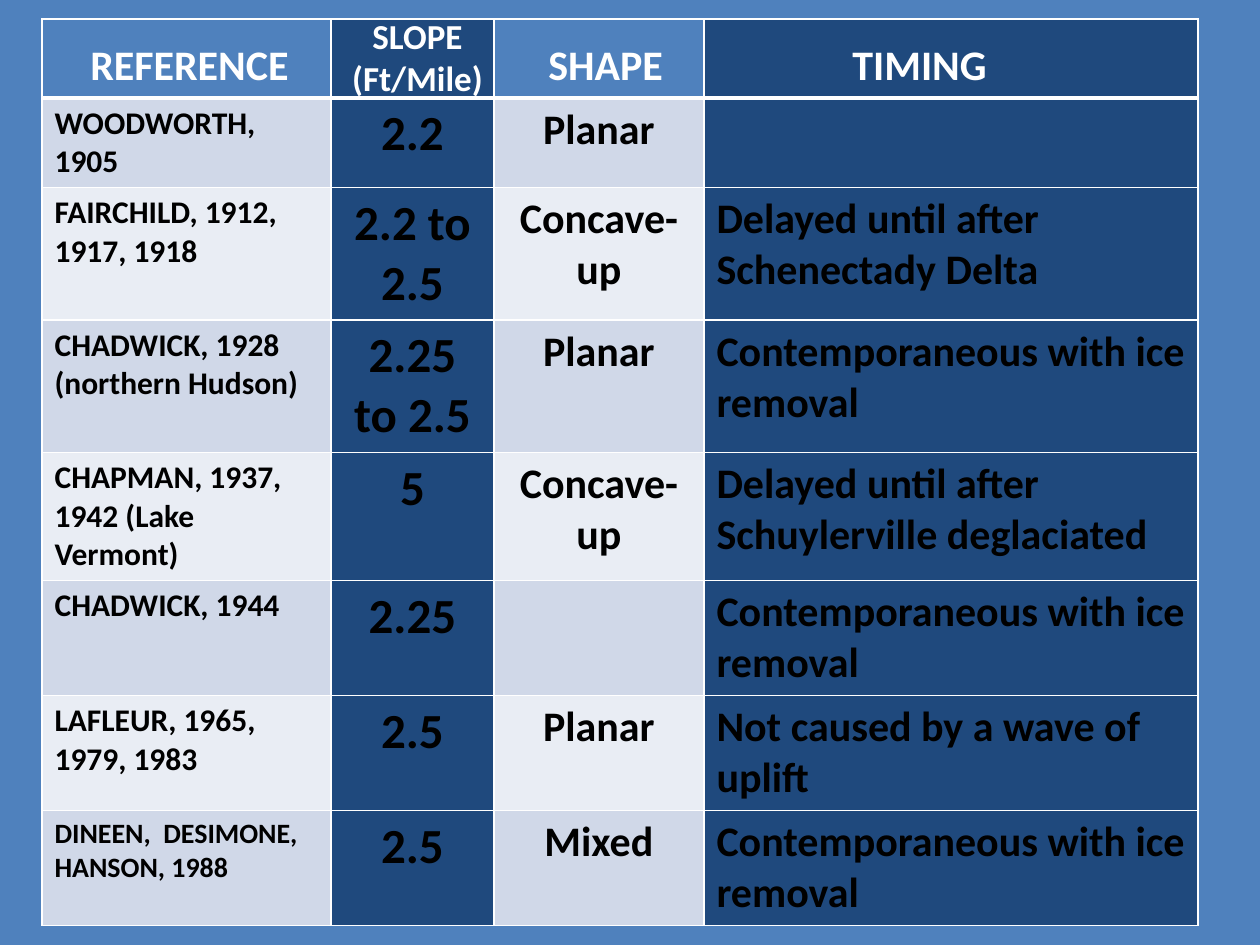
from lxml.etree import SubElement
from pptx import Presentation
from pptx.dml.color import RGBColor
from pptx.enum.text import MSO_AUTO_SIZE, PP_ALIGN
from pptx.oxml.ns import qn
from pptx.util import Emu, Pt

BLUE = RGBColor(0x4F, 0x81, 0xBD)
NAVY = RGBColor(0x1F, 0x49, 0x7D)
BAND_DARK = RGBColor(0xD0, 0xD8, 0xE8)
BAND_LIGHT = RGBColor(0xE9, 0xED, 0xF4)
WHITE = RGBColor(0xFF, 0xFF, 0xFF)
BLACK = RGBColor(0, 0, 0)

COLUMN_WIDTHS = [289, 163, 210, 494]
ROW_HEIGHTS = [79, 79, 113, 105, 102, 101, 79, 79]
COLUMN_SIZES = [18, 28, 24, 24]
COLUMN_ALIGNS = [PP_ALIGN.LEFT, PP_ALIGN.CENTER, PP_ALIGN.CENTER, PP_ALIGN.LEFT]

STUDIES = [
    ["WOODWORTH, 1905", "2.2", "Planar", ""],
    ["FAIRCHILD, 1912, 1917, 1918", "2.2 to 2.5", "Concave-up",
     "Delayed until after Schenectady Delta"],
    ["CHADWICK, 1928\n(northern Hudson)", "2.25 to 2.5", "Planar",
     "Contemporaneous with ice removal"],
    ["CHAPMAN, 1937, 1942 (Lake Vermont)", "5", "Concave-up",
     "Delayed until after Schuylerville deglaciated"],
    ["CHADWICK, 1944", "2.25", "", "Contemporaneous with ice removal"],
    ["LAFLEUR, 1965, 1979, 1983", "2.5", "Planar",
     "Not caused by a wave of uplift"],
    ["DINEEN,  DESIMONE, HANSON, 1988", "2.5", "Mixed",
     "Contemporaneous with ice removal"],
]

# Text, left, top, width, height, size, wrap, alignment
HEADINGS = [
    ("REFERENCE", 78, 32, 226, 63, 24, False, PP_ALIGN.LEFT),
    ("SLOPE (Ft/Mile)", 294, 8, 247, 97, 20, True, PP_ALIGN.CENTER),
    ("SHAPE", 536, 32, 141, 63, 24, False, PP_ALIGN.LEFT),
    ("TIMING", 840, 32, 161, 63, 24, False, PP_ALIGN.LEFT),
]


def px(length):
    return Emu(round(length * 914400 / 126))


class SlideBuilder:
    font = "Calibri"

    def __init__(self, slide):
        self.slide = slide

    def background(self, color):
        fill = self.slide.background.fill
        fill.solid()
        fill.fore_color.rgb = color

    def set_text(self, frame, text, size, color, align):
        frame.text = text
        for para in frame.paragraphs:
            para.alignment = align
            for span in para.runs:
                span.font.name = self.font
                span.font.size = Pt(size)
                span.font.bold = True
                span.font.color.rgb = color

    def heading(self, text, left, top, width, height, size, wrap, align):
        box = self.slide.shapes.add_textbox(px(left), px(top), px(width), px(height))
        frame = box.text_frame
        frame.word_wrap = wrap
        frame.auto_size = MSO_AUTO_SIZE.SHAPE_TO_FIT_TEXT
        self.set_text(frame, text, size, WHITE, align)

    def table(self, left, top, height, widths, heights):
        frame = self.slide.shapes.add_table(
            len(heights), len(widths), px(left), px(top), px(sum(widths)), px(height))
        for column, width in zip(frame.table.columns, widths):
            column.width = px(width)
        for row, row_height in zip(frame.table.rows, heights):
            row.height = px(row_height)
        frame.height = px(height)
        return frame.table

    def cell(self, cell, color, top_line=1, bottom_line=1):
        # Borders come before the fill in the cell properties
        properties = cell._tc.get_or_add_tcPr()
        for side, width in (("L", 1), ("R", 1), ("T", top_line), ("B", bottom_line)):
            line = SubElement(properties, qn("a:ln" + side), w=str(Pt(width)))
            paint = SubElement(line, qn("a:solidFill"))
            SubElement(paint, qn("a:srgbClr"), val=str(WHITE))
        cell.fill.solid()
        cell.fill.fore_color.rgb = color


def main():
    deck = Presentation()
    deck.slide_width, deck.slide_height = px(1260), px(945)
    page = SlideBuilder(deck.slides.add_slide(deck.slide_layouts[6]))
    page.background(BLUE)

    # Table of studies, with an empty header row
    table = page.table(42, 19, 895, COLUMN_WIDTHS, ROW_HEIGHTS)
    for column in range(len(COLUMN_WIDTHS)):
        navy = column % 2 == 1
        page.cell(table.cell(0, column), NAVY if navy else BLUE, bottom_line=3)
        for row, study in enumerate(STUDIES, start=1):
            band = BAND_DARK if row % 2 else BAND_LIGHT
            cell = table.cell(row, column)
            page.cell(cell, NAVY if navy else band, top_line=3 if row == 1 else 1)
            last_reference = row == len(STUDIES) and column == 0
            size = 16 if last_reference else COLUMN_SIZES[column]
            if study[column]:
                page.set_text(cell.text_frame, study[column], size, BLACK,
                              COLUMN_ALIGNS[column])

    # Column headings over the header row
    for heading in HEADINGS:
        page.heading(*heading)

    deck.save("out.pptx")


if __name__ == "__main__":
    main()
